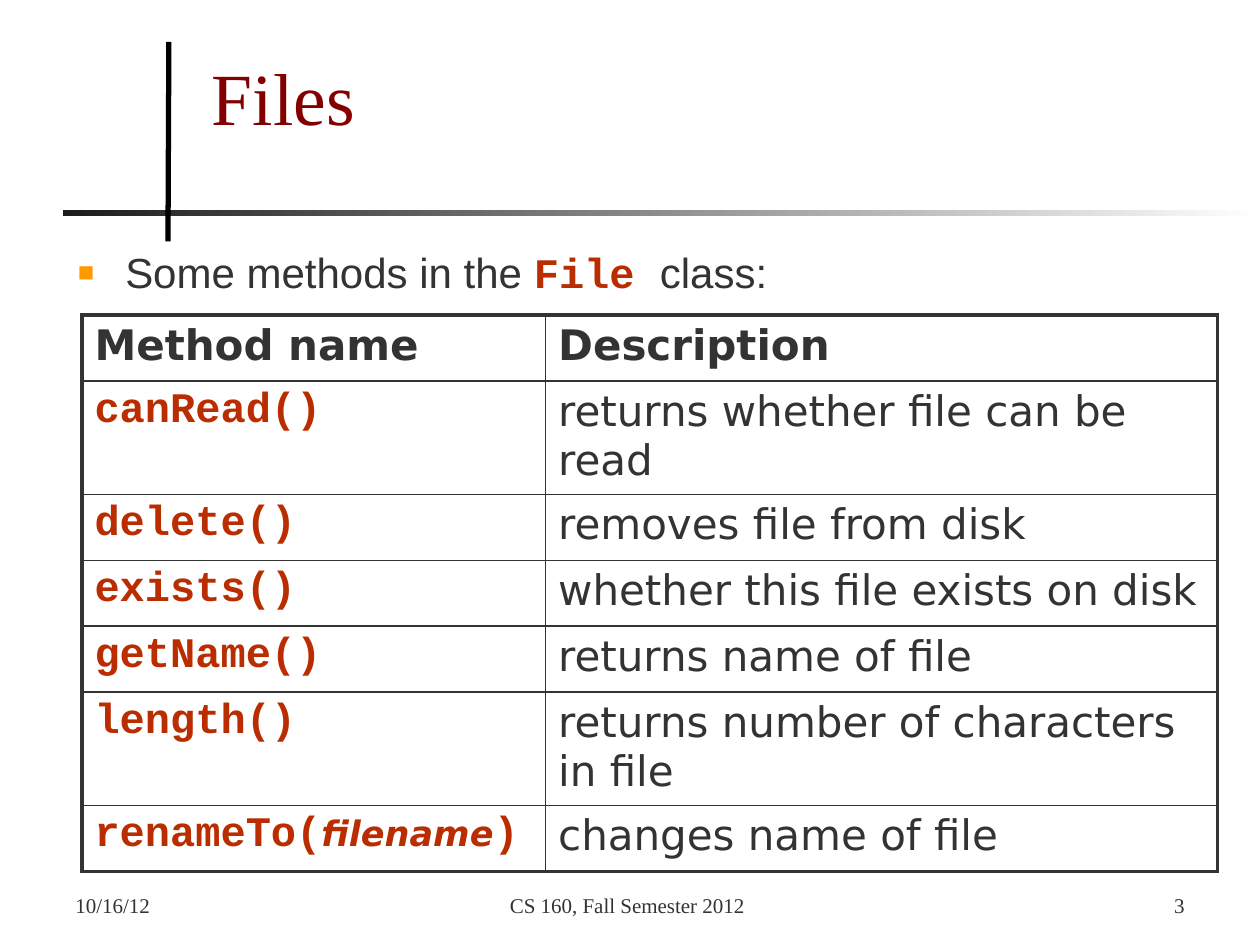
from lxml.etree import SubElement
from pptx import Presentation
from pptx.dml.color import RGBColor
from pptx.enum.shapes import MSO_CONNECTOR as LINE, MSO_SHAPE as SHAPE
from pptx.enum.text import MSO_ANCHOR as ANCHOR, PP_ALIGN as ALIGN
from pptx.oxml import parse_xml
from pptx.oxml.ns import nsdecls, qn
from pptx.util import Pt

BLACK = RGBColor(0, 0, 0)
WHITE = RGBColor(255, 255, 255)
DARK = RGBColor(0x1C, 0x1C, 0x1C)
GRAY = RGBColor(0x33, 0x33, 0x33)
MAROON = RGBColor(0x82, 0, 0)
RUST = RGBColor(0xB9, 0x2D, 0)
ORANGE = RGBColor(0xFF, 0x99, 0)

SERIF = "Times New Roman"
# Run styles: font, size, colour, bold, italic
TITLE = (SERIF, 42, MAROON, False, False)
BODY = ("Arial", 24, GRAY, False, False)
CODE = ("Courier New", 24, RUST, True, False)
PARAM = ("DejaVu Sans", 20, RUST, True, True)
HEAD = ("DejaVu Sans", 24, GRAY, True, False)
DESC = ("DejaVu Sans", 24, GRAY, False, False)
SMALL = (SERIF, 12, GRAY, False, False)

INTRO = [("Some methods in the ", BODY), ("File ", CODE), ("class:", BODY)]
METHODS = [
    ("canRead()", "returns whether file can be read"),
    ("delete()", "removes file from disk"),
    ("exists()", "whether this file exists on disk"),
    ("getName()", "returns name of file"),
    ("length()", "returns number of characters in file"),
]
RENAME = [("renameTo(", CODE), ("filename", PARAM), (")", CODE)]
ROWS = [
    ([("Method name", HEAD)], [("Description", HEAD)]),
    *[([(name, CODE)], [(text, DESC)]) for name, text in METHODS],
    (RENAME, [("changes name of file", DESC)]),
]
FOOT = [  # text, left, width, alignment
    ("10/16/12", 36, 168, ALIGN.LEFT),
    ("CS 160, Fall Semester 2012 ", 246, 228, ALIGN.CENTER),
    ("3", 516, 168, ALIGN.RIGHT),
]
COLS = (265, 384)
ROW_H = 37.7
THIN, THICK = 1, 2.25


def write(para, runs):
    for text, (name, size, color, bold, italic) in runs:
        run = para.add_run()
        run.text = text
        font = run.font
        font.name, font.size = name, Pt(size)
        font.bold, font.italic = bold, italic
        font.color.rgb = color


def add_text(slide, box, runs, align=ALIGN.LEFT, anchor=ANCHOR.TOP):
    frame = slide.shapes.add_textbox(*map(Pt, box)).text_frame
    frame.word_wrap = True
    frame.vertical_anchor = anchor
    para = frame.paragraphs[0]
    para.alignment = align
    write(para, runs)
    return frame


def add_bullet(para, indent):
    props = para._p.get_or_add_pPr()
    props.set("marL", str(Pt(indent)))
    props.set("indent", str(-Pt(indent)))
    color = SubElement(props, qn("a:buClr"))
    SubElement(color, qn("a:srgbClr"), val=str(ORANGE))
    SubElement(props, qn("a:buSzPct"), val="65000")
    SubElement(props, qn("a:buFont"), typeface="Arial")
    SubElement(props, qn("a:buChar"), char="■")


def set_borders(cell, widths):
    """Draw the left, right, top and bottom borders, in that order."""
    props = cell._tc.get_or_add_tcPr()
    for pos, (side, width) in enumerate(zip("LRTB", widths)):
        props.insert(pos, parse_xml(
            f'<a:ln{side} {nsdecls("a")} w="{Pt(width)}"><a:solidFill>'
            f'<a:srgbClr val="{GRAY}"/></a:solidFill></a:ln{side}>'))


def add_rules(slide):
    bar = slide.shapes.add_shape(SHAPE.RECTANGLE, Pt(36), Pt(120), Pt(684), Pt(3.6))
    bar.shadow.inherit = False
    bar.line.fill.background()
    bar.fill.gradient()
    bar.fill.gradient_angle = 0
    for stop, pos, color in zip(bar.fill.gradient_stops, (0, 1), (DARK, WHITE)):
        stop.position = pos
        stop.color.rgb = color
    post = slide.shapes.add_connector(LINE.STRAIGHT, Pt(96), Pt(138), Pt(96.5), Pt(24))
    post.line.color.rgb = BLACK
    post.line.width = Pt(3)
    SubElement(post._element.spPr, qn("a:effectLst"))


def add_methods(slide):
    table = slide.shapes.add_table(
        len(ROWS), len(COLS), Pt(46.8), Pt(180),
        Pt(sum(COLS)), Pt(ROW_H * len(ROWS))).table
    table.first_row = table.horz_banding = False
    for col, width in zip(table.columns, COLS):
        col.width = Pt(width)
    last = len(ROWS) - 1
    for i, row in enumerate(ROWS):
        table.rows[i].height = Pt(ROW_H)
        for j, runs in enumerate(row):
            cell = table.cell(i, j)
            cell.fill.background()
            outer = (j == 0, j == len(COLS) - 1, i == 0, i == last)
            set_borders(cell, [THICK if edge else THIN for edge in outer])
            write(cell.text_frame.paragraphs[0], runs)


def main():
    prs = Presentation()
    prs.slide_width, prs.slide_height = Pt(720), Pt(540)
    slide = prs.slides.add_slide(prs.slide_layouts[6])
    add_rules(slide)
    title = add_text(slide, (114, 21.6, 570, 90), [("Files", TITLE)])
    title.margin_top = Pt(8)
    intro = add_text(slide, (37.5, 140.4, 684, 356.4), INTRO).paragraphs[0]
    intro.line_spacing = 0.9
    add_bullet(intro, 27)
    add_methods(slide)
    for text, left, width, align in FOOT:
        add_text(slide, (left, 492, width, 36), [(text, SMALL)], align, ANCHOR.BOTTOM)
    prs.save("out.pptx")


if __name__ == "__main__":
    main()
